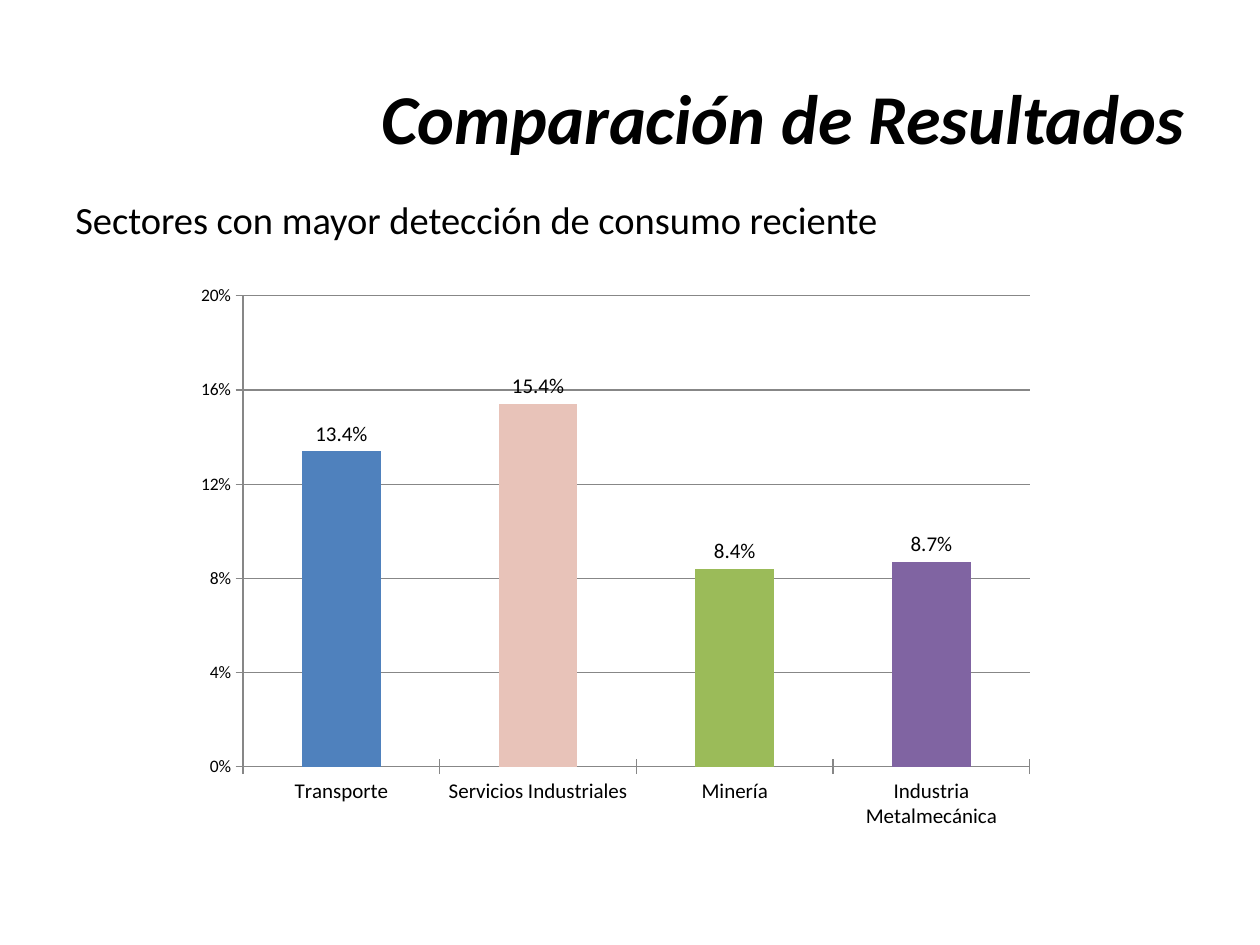
from dataclasses import dataclass

from pptx import Presentation
from pptx.chart.data import CategoryChartData as ChartData
from pptx.dml.color import RGBColor
from pptx.enum.chart import XL_CHART_TYPE as Kind
from pptx.enum.chart import XL_LABEL_POSITION as Spot
from pptx.enum.chart import XL_TICK_MARK as Tick
from pptx.enum.text import MSO_ANCHOR as Anchor
from pptx.enum.text import PP_ALIGN as Align
from pptx.util import Inches, Pt

FONT = "Calibri"
HEX = {
    "text": "000000",
    "line": "878787",
    "blue": "4F81BD",
    "pink": "E8C3B9",
    "green": "9BBB59",
    "purple": "8064A2",
}


@dataclass
class Label:
    text: str
    box: tuple[float, float, float, float]
    size: int
    align: Align = Align.LEFT
    anchor: Anchor = Anchor.TOP
    strong: bool = False


@dataclass
class Bar:
    sector: str
    share: float
    color: str


LABELS = [
    Label("Comparación de Resultados", (0.5, 0.3, 9, 1.25), 40,
          Align.RIGHT, Anchor.MIDDLE, True),
    Label("Sectores con mayor detección de consumo reciente",
          (0.5, 1.51, 9, 1.13), 22),
]
BARS = [
    Bar("Transporte", 0.134, "blue"),
    Bar("Servicios Industriales", 0.154, "pink"),
    Bar("Minería", 0.084, "green"),
    Bar("Industria Metalmecánica", 0.087, "purple"),
]


def color(name: str) -> RGBColor:
    return RGBColor.from_string(HEX[name])


def style(font, size: int) -> None:
    font.name = FONT
    font.size = Pt(size)
    font.color.rgb = color("text")


def add_label(slide, label: Label) -> None:
    frame = slide.shapes.add_textbox(*map(Inches, label.box)).text_frame
    frame.word_wrap = True
    frame.vertical_anchor = label.anchor
    para = frame.paragraphs[0]
    para.alignment = label.align
    run = para.add_run()
    run.text = label.text
    style(run.font, label.size)
    run.font.bold = run.font.italic = label.strong


def add_bars(slide, bars: list[Bar]) -> None:
    data = ChartData(number_format="0.0%")
    data.categories = [bar.sector for bar in bars]
    data.add_series("Series 1", [bar.share for bar in bars])
    box = map(Inches, (1.46, 2.18, 6.85, 4.49))
    chart = slide.shapes.add_chart(Kind.COLUMN_CLUSTERED, *box, data).chart
    chart.has_legend = False
    chart.has_title = False
    style(chart.font, 10)

    # Axes and grid
    cat, val = chart.category_axis, chart.value_axis
    for axis, size in ((cat, 12), (val, 10)):
        axis.major_tick_mark = Tick.CROSS
        axis.minor_tick_mark = Tick.NONE
        axis.format.line.color.rgb = color("line")
        style(axis.tick_labels.font, size)
    val.minimum_scale, val.maximum_scale, val.major_unit = 0, 0.2, 0.04
    val.tick_labels.number_format = "0%"
    val.tick_labels.number_format_is_linked = False
    val.has_major_gridlines = True
    val.major_gridlines.format.line.color.rgb = color("line")

    # Columns
    plot = chart.plots[0]
    plot.gap_width = 150
    plot.vary_by_categories = False
    series = plot.series[0]
    for i, bar in enumerate(bars):
        fill = series.points[i].format.fill
        fill.solid()
        fill.fore_color.rgb = color(bar.color)

    # Value labels
    tags = series.data_labels
    tags.show_value = True
    tags.position = Spot.OUTSIDE_END
    tags.number_format = "0.0%"
    tags.number_format_is_linked = False
    style(tags.font, 12)


def main() -> None:
    deck = Presentation()
    deck.slide_width, deck.slide_height = Inches(10), Inches(7.5)
    slide = deck.slides.add_slide(deck.slide_layouts[6])
    for label in LABELS:
        add_label(slide, label)
    add_bars(slide, BARS)
    deck.save("out.pptx")


if __name__ == "__main__":
    main()
